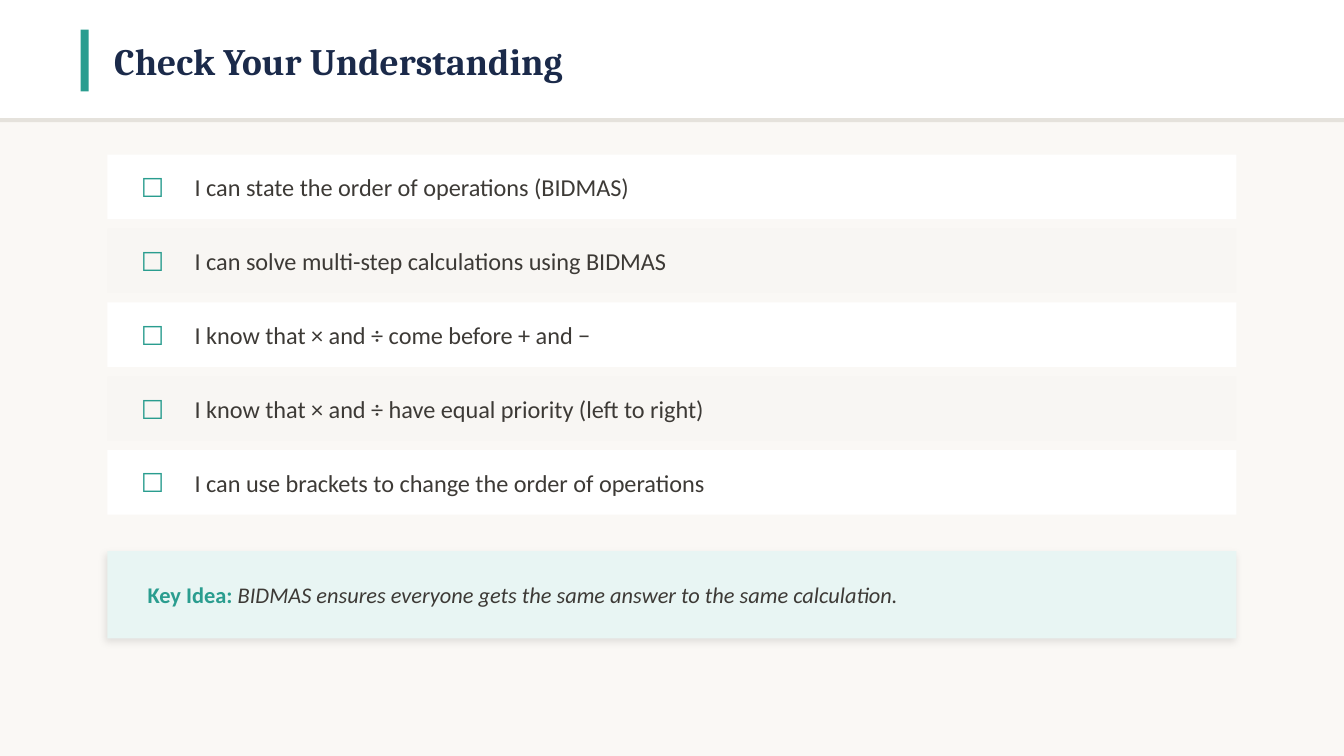
from dataclasses import dataclass

from lxml import etree
from pptx import Presentation
from pptx.dml.color import RGBColor
from pptx.enum.shapes import MSO_SHAPE as Shape
from pptx.enum.text import MSO_ANCHOR as Anchor
from pptx.oxml.ns import qn
from pptx.util import Inches, Pt

# Widescreen page, in inches
SLIDE_WIDTH = 10
SLIDE_HEIGHT = SLIDE_WIDTH * 9 / 16

# Content grid, in inches
LEFT, WIDTH = 0.8, 8.4
FIRST_ROW, ROW_HEIGHT, ROW_GAP = 1.15, 0.48, 0.07
ROW_PITCH = ROW_HEIGHT + ROW_GAP

GOALS = [
    "I can state the order of operations (BIDMAS)",
    "I can solve multi-step calculations using BIDMAS",
    "I know that × and ÷ come before + and −",
    "I know that × and ÷ have equal priority (left to right)",
    "I can use brackets to change the order of operations",
]


@dataclass(frozen=True)
class Theme:
    background: str = "FAF8F5"
    white: str = "FFFFFF"
    stripe: str = "F8F6F3"
    rule: str = "E5E2DC"
    accent: str = "2A9D8F"
    tint: str = "E8F5F3"
    navy: str = "1B2A4A"
    ink: str = "3D3A36"
    heading_font: str = "Cambria"
    body_font: str = "Calibri"
    title_size: int = 20
    check_size: int = 14
    goal_size: int = 13
    note_size: int = 12


THEME = Theme()


def add_block(page, left, top, width, height, color):
    block = page.shapes.add_shape(
        Shape.RECTANGLE, Inches(left), Inches(top), Inches(width), Inches(height))
    block.fill.solid()
    block.fill.fore_color.rgb = RGBColor.from_string(color)
    block.line.fill.background()
    block.shadow.inherit = False
    return block


def add_soft_shadow(block, blur=4, distance=2, angle=135, opacity=10):
    effects = block.element.spPr.find(qn("a:effectLst"))
    shadow = etree.SubElement(
        effects, qn("a:outerShdw"), blurRad=str(Pt(blur)), dist=str(Pt(distance)),
        dir=str(angle * 60000), algn="bl", rotWithShape="0")
    color = etree.SubElement(shadow, qn("a:srgbClr"), val="000000")
    etree.SubElement(color, qn("a:alpha"), val=str(opacity * 1000))


def add_text(page, left, top, width, height, text, size, color, font=THEME.body_font):
    box = page.shapes.add_textbox(
        Inches(left), Inches(top), Inches(width), Inches(height))
    frame = box.text_frame
    frame.word_wrap = True
    frame.vertical_anchor = Anchor.MIDDLE
    para = frame.paragraphs[0]
    if text:
        para.add_run().text = text
    para.font.name = font
    para.font.size = Pt(size)
    para.font.color.rgb = RGBColor.from_string(color)
    return frame


def add_span(para, text, color, bold=False, italic=False):
    span = para.add_run()
    span.text = text
    span.font.bold, span.font.italic = bold, italic
    span.font.color.rgb = RGBColor.from_string(color)


def add_header(page, title):
    add_block(page, 0, 0, SLIDE_WIDTH, 0.9, THEME.white)
    add_block(page, 0, 0.88, SLIDE_WIDTH, 0.03, THEME.rule)
    add_block(page, 0.6, 0.22, 0.06, 0.46, THEME.accent)
    frame = add_text(page, 0.85, 0.15, 8.5, 0.6, title,
                     THEME.title_size, THEME.navy, THEME.heading_font)
    frame.margin_left = frame.margin_right = frame.margin_top = frame.margin_bottom = 0
    frame.paragraphs[0].font.bold = True


def add_goal(page, row, goal):
    top = FIRST_ROW + row * ROW_PITCH
    add_block(page, LEFT, top, WIDTH, ROW_HEIGHT,
              THEME.stripe if row % 2 else THEME.white)
    add_text(page, LEFT + 0.15, top, 0.35, ROW_HEIGHT, "☐",
             THEME.check_size, THEME.accent)
    add_text(page, LEFT + 0.55, top, 7.6, ROW_HEIGHT, goal,
             THEME.goal_size, THEME.ink)


def add_key_idea(page, label, idea):
    top, height = FIRST_ROW + len(GOALS) * ROW_PITCH + 0.2, 0.65
    add_soft_shadow(add_block(page, LEFT, top, WIDTH, height, THEME.tint))
    frame = add_text(page, LEFT + 0.2, top, WIDTH - 0.4, height, "",
                     THEME.note_size, THEME.ink)
    para = frame.paragraphs[0]
    add_span(para, label, THEME.accent, bold=True)
    add_span(para, idea, THEME.ink, italic=True)


def main():
    deck = Presentation()
    deck.slide_width, deck.slide_height = Inches(SLIDE_WIDTH), Inches(SLIDE_HEIGHT)
    page = deck.slides.add_slide(deck.slide_layouts[6])
    page.background.fill.solid()
    page.background.fill.fore_color.rgb = RGBColor.from_string(THEME.background)

    # Title band
    add_header(page, "Check Your Understanding")

    # Checklist
    for row, goal in enumerate(GOALS):
        add_goal(page, row, goal)

    # Closing note
    add_key_idea(page, "Key Idea: ",
                 "BIDMAS ensures everyone gets the same answer to the same calculation.")

    deck.save("out.pptx")


if __name__ == "__main__":
    main()
